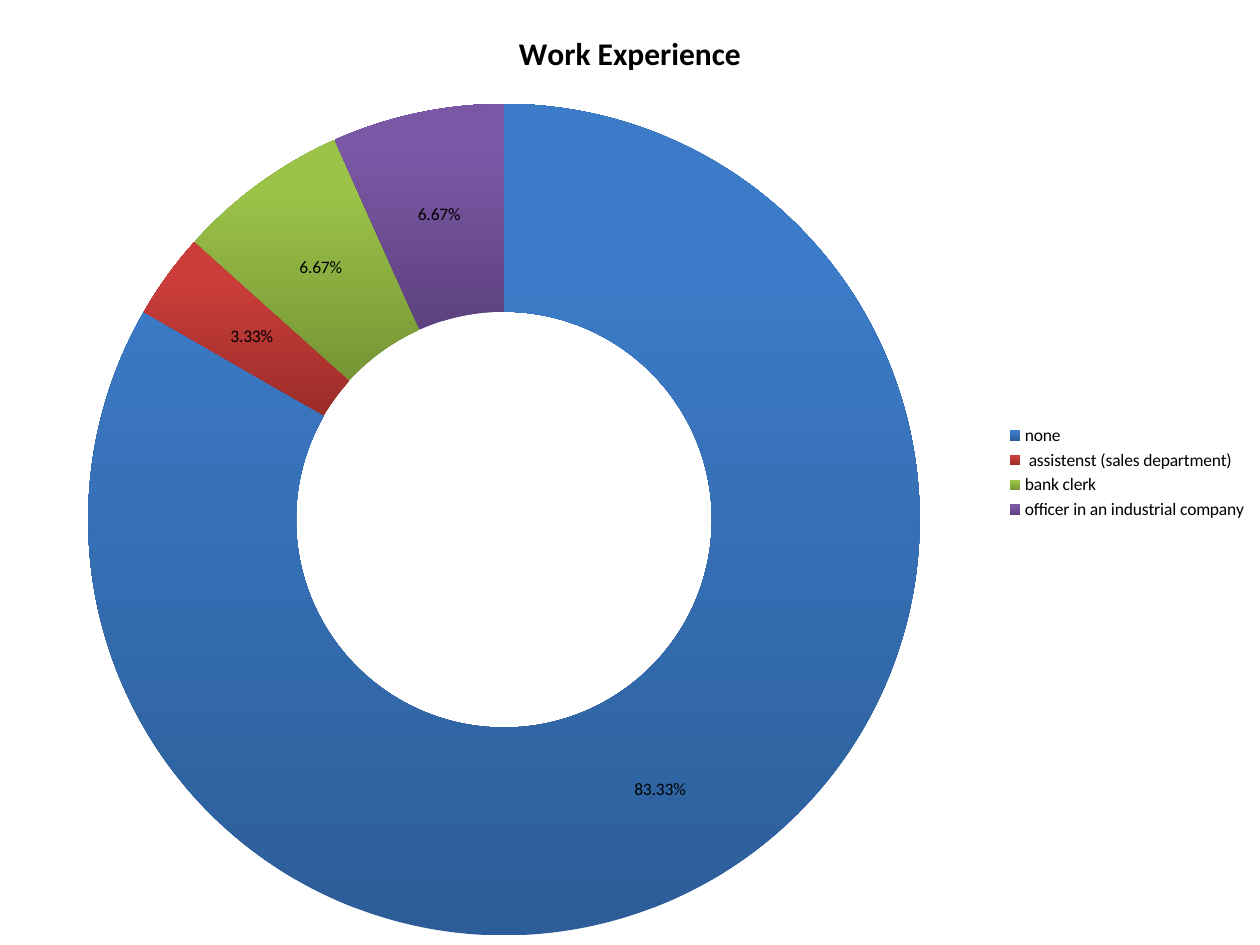
from lxml import etree
from pptx import Presentation
from pptx.chart.data import CategoryChartData
from pptx.dml.color import RGBColor
from pptx.enum.chart import XL_CHART_TYPE, XL_LEGEND_POSITION
from pptx.oxml.ns import qn
from pptx.util import Inches, Pt

DOUGHNUT = XL_CHART_TYPE.DOUGHNUT
RIGHT = XL_LEGEND_POSITION.RIGHT

TITLE = "Work Experience"
SLIDE_WIDTH, SLIDE_HEIGHT = Inches(10), Inches(7.5)
ROWS = [
    ("none", 0.8333, "2C5D98", "3C7BC7"),
    (" assistenst (sales department)", 0.0333, "9B2D2A", "CB3D3A"),
    ("bank clerk", 0.0667, "769535", "9BC348"),
    ("officer in an industrial company", 0.0667, "5D417E", "7B58A6"),
]
RING_AREA = {"x": 0.07, "y": 0.11, "w": 0.66, "h": 0.88}


def set_color(color, value):
    color.rgb = RGBColor.from_string(value)


def set_font(font, size, bold=False):
    font.name = "Calibri"
    font.size = Pt(size)
    font.bold = bold
    set_color(font.color, "000000")


def place_ring(chart, area):
    plot_area = chart.element.find(".//" + qn("c:plotArea"))
    layout = plot_area.find(qn("c:layout"))
    if layout is None:
        layout = etree.Element(qn("c:layout"))
        plot_area.insert(0, layout)
    manual = etree.SubElement(layout, qn("c:manualLayout"))
    settings = {"layoutTarget": "inner", "xMode": "edge", "yMode": "edge", **area}
    for name, value in settings.items():
        etree.SubElement(manual, qn("c:" + name)).set("val", str(value))


def shade(fill, dark, bright):
    fill.gradient()
    fill.gradient_angle = 90
    for stop, value, position in zip(fill.gradient_stops, (dark, bright), (0, 0.8)):
        set_color(stop.color, value)
        stop.position = position


def main():
    """Build a slide with a doughnut chart of work experience."""
    deck = Presentation()
    deck.slide_width, deck.slide_height = SLIDE_WIDTH, SLIDE_HEIGHT
    page = deck.slides.add_slide(deck.slide_layouts[6])

    data = CategoryChartData(number_format="0.00%")
    data.categories = [row[0] for row in ROWS]
    data.add_series(TITLE, [row[1] for row in ROWS])
    chart = page.shapes.add_chart(
        DOUGHNUT, 0, 0, SLIDE_WIDTH, SLIDE_HEIGHT, data
    ).chart
    set_font(chart.font, 10)

    chart.has_title = True
    heading = chart.chart_title.text_frame
    heading.text = TITLE
    set_font(heading.paragraphs[0].font, 18, bold=True)
    chart.chart_title.include_in_layout = False

    chart.has_legend = True
    chart.legend.position = RIGHT
    chart.legend.include_in_layout = False
    set_font(chart.legend.font, 10)
    place_ring(chart, RING_AREA)

    plot = chart.plots[0]
    plot.vary_by_categories = True
    plot.has_data_labels = True
    labels = plot.data_labels
    labels.show_value = True
    labels.show_percentage = False
    labels.number_format = "0.00%"
    labels.number_format_is_linked = False
    set_font(labels.font, 10)

    for index, (_, _, dark, bright) in enumerate(ROWS):
        shade(plot.series[0].points[index].format.fill, dark, bright)

    deck.save("out.pptx")


if __name__ == "__main__":
    main()
